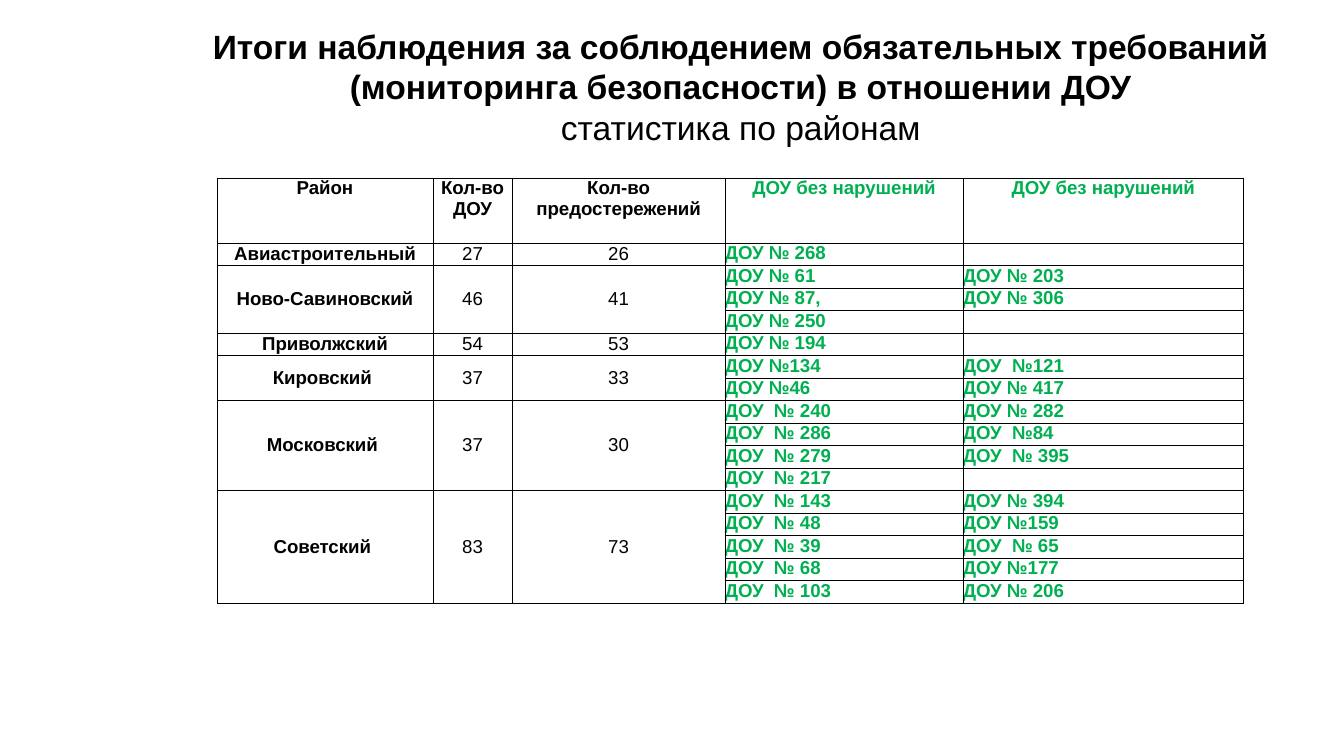
from lxml.etree import SubElement
from pptx import Presentation
from pptx.dml.color import RGBColor
from pptx.enum.text import MSO_ANCHOR as Anchor, MSO_AUTO_SIZE as AutoSize, PP_ALIGN as Align
from pptx.oxml.ns import qn
from pptx.util import Cm, Pt

BLACK = RGBColor(0x00, 0x00, 0x00)
GREEN = RGBColor(0x00, 0xB0, 0x50)

COLUMN_WIDTHS = (4.08, 1.5, 4.02, 4.5, 5.3)
HEADER_HEIGHT = 1.23
BODY_HEIGHT = 6.62
HEADERS = ("Район", "Кол-во\nДОУ", "Кол-во предостережений",
           "ДОУ без нарушений", "ДОУ без нарушений")
# District, kindergartens, warnings, then the two columns without violations
DISTRICTS = (
    ("Авиастроительный", 27, 26, ["ДОУ № 268"], []),
    ("Ново-Савиновский", 46, 41,
     ["ДОУ № 61", "ДОУ № 87,", "ДОУ № 250"],
     ["ДОУ № 203", "ДОУ № 306"]),
    ("Приволжский", 54, 53, ["ДОУ № 194"], []),
    ("Кировский ", 37, 33,
     ["ДОУ №134", "ДОУ №46"],
     ["ДОУ  №121", "ДОУ № 417"]),
    ("Московский ", 37, 30,
     ["ДОУ  № 240", "ДОУ  № 286", "ДОУ  № 279", "ДОУ  № 217"],
     ["ДОУ № 282", "ДОУ  №84", "ДОУ  № 395"]),
    ("Советский ", 83, 73,
     ["ДОУ  № 143", "ДОУ  № 48", "ДОУ  № 39", "ДОУ  № 68", "ДОУ  № 103"],
     ["ДОУ № 394", "ДОУ №159", "ДОУ  № 65", "ДОУ №177", "ДОУ № 206"]),
)


def set_attributes(target, **values):
    for name, value in values.items():
        setattr(target, name, value)


class SlideBuilder:
    font_name = "Arial"
    title_size = Pt(18)
    table_size = Pt(10)
    border_width = Pt(0.25)

    def __init__(self, presentation):
        self.slide = presentation.slides.add_slide(presentation.slide_layouts[5])

    def format_font(self, font, size, color, bold):
        set_attributes(font, name=self.font_name, size=size, bold=bold)
        font.color.rgb = color

    def title(self, lines, left, top, width, height):
        """Fill the title with (text, bold) lines."""
        shape = self.slide.shapes.title
        set_attributes(shape, left=Cm(left), top=Cm(top),
                       width=Cm(width), height=Cm(height))
        frame = shape.text_frame
        frame.text = "\n".join(text for text, _ in lines)
        set_attributes(frame, word_wrap=True, vertical_anchor=Anchor.TOP,
                       auto_size=AutoSize.SHAPE_TO_FIT_TEXT)
        for paragraph, (_, bold) in zip(frame.paragraphs, lines):
            paragraph.alignment = Align.CENTER
            self.format_font(paragraph.runs[0].font, self.title_size, BLACK, bold)

    def table(self, left, top, widths, heights):
        """Add an empty table with plain bordered cells."""
        frame = self.slide.shapes.add_table(
            len(heights), len(widths), Cm(left), Cm(top),
            Cm(sum(widths)), Cm(sum(heights)))
        table = frame.table
        set_attributes(table, first_row=False, horz_banding=False)
        for column, width in zip(table.columns, widths):
            column.width = Cm(width)
        for row, height in zip(table.rows, heights):
            row.height = Cm(height)
        for cell in table.iter_cells():
            self.plain_cell(cell)
        return table

    def plain_cell(self, cell):
        set_attributes(cell, margin_left=0, margin_right=0, margin_top=0, margin_bottom=0)
        cell.fill.background()
        properties = cell._tc.get_or_add_tcPr()
        for index, side in enumerate(("a:lnL", "a:lnR", "a:lnT", "a:lnB")):
            line = SubElement(properties, qn(side), w=str(self.border_width))
            fill = SubElement(line, qn("a:solidFill"))
            SubElement(fill, qn("a:srgbClr"), val=str(BLACK))
            properties.insert(index, line)
        # An empty cell must not be taller than a line of table text
        SubElement(cell.text_frame.paragraphs[0]._p, qn("a:endParaRPr"),
                   sz=str(int(self.table_size.pt * 100)))

    def cell_text(self, cell, text, color=BLACK, bold=True,
                  alignment=Align.CENTER, anchor=Anchor.TOP):
        cell.text = str(text)
        cell.vertical_anchor = anchor
        for paragraph in cell.text_frame.paragraphs:
            paragraph.alignment = alignment
            for run in paragraph.runs:
                self.format_font(run.font, self.table_size, color, bold)

    def district(self, table, first_row, summary, lists):
        """Fill one district and return the number of rows it takes."""
        row_count = max(map(len, lists))
        for column, value in enumerate(summary):
            cell = table.cell(first_row, column)
            if row_count > 1:
                cell.merge(table.cell(first_row + row_count - 1, column))
            self.cell_text(cell, value, bold=column == 0, anchor=Anchor.MIDDLE)
        for column, names in enumerate(lists, start=len(summary)):
            for row, name in enumerate(names, start=first_row):
                self.cell_text(table.cell(row, column), name, GREEN, alignment=Align.LEFT)
        return row_count


def main():
    presentation = Presentation()
    set_attributes(presentation, slide_width=Cm(25.4), slide_height=Cm(14.28))
    builder = SlideBuilder(presentation)

    body_rows = sum(max(len(first), len(second)) for *_, first, second in DISTRICTS)
    heights = [HEADER_HEIGHT] + [BODY_HEIGHT / body_rows] * body_rows
    table = builder.table(4.1, 3.36, COLUMN_WIDTHS, heights)
    for column, header in enumerate(HEADERS):
        builder.cell_text(table.cell(0, column), header, GREEN if column > 2 else BLACK)
    row = 1
    for *summary, first, second in DISTRICTS:
        row += builder.district(table, row, summary, (first, second))

    builder.title(
        [("Итоги наблюдения за соблюдением обязательных требований "
          "(мониторинга безопасности) в отношении ДОУ", True),
         ("статистика по районам", False)],
        3.1, 0.36, 21.8, 2.56)
    presentation.save("out.pptx")


if __name__ == "__main__":
    main()
